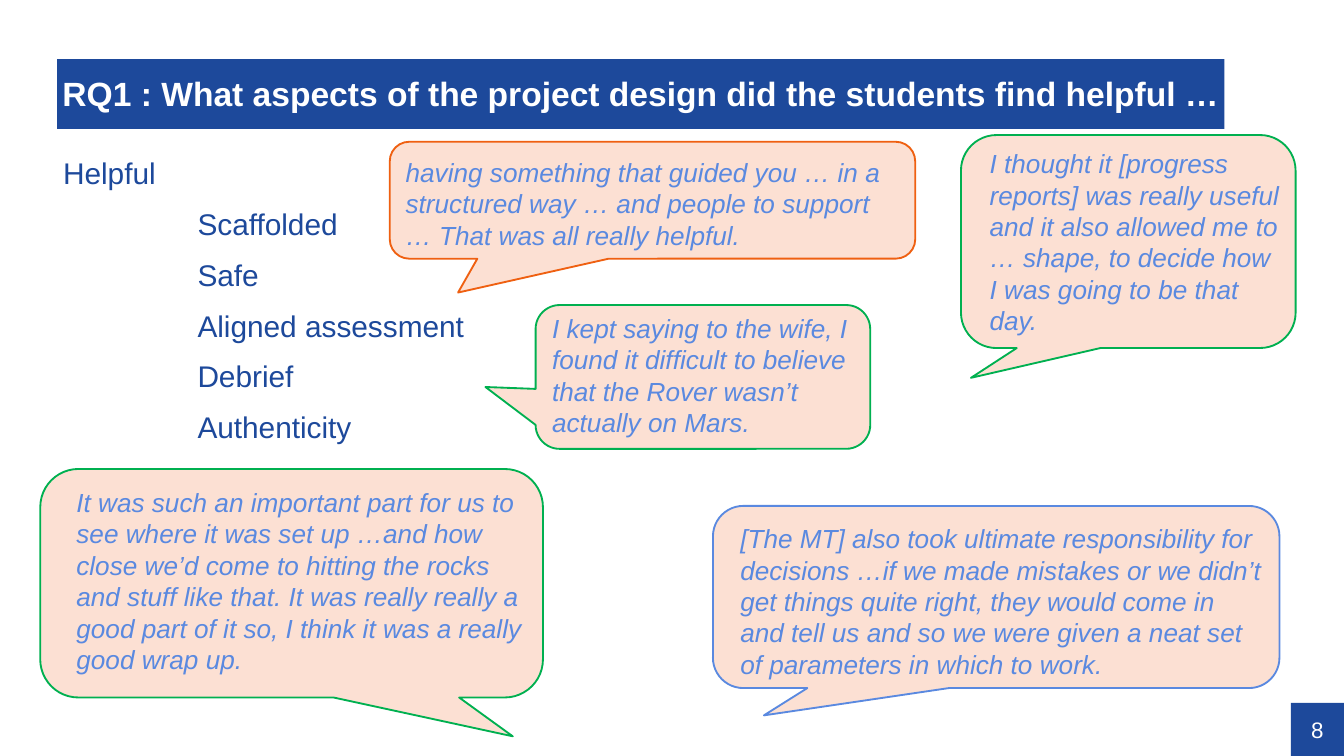
"""Build the slide on which aspects of the project design students found helpful."""
from typing import NamedTuple

from pptx import Presentation
from pptx.dml.color import RGBColor as Rgb
from pptx.enum.shapes import MSO_SHAPE as Shape
from pptx.enum.text import MSO_ANCHOR as Anchor, MSO_AUTO_SIZE as Fit, PP_ALIGN as Align
from pptx.util import Emu, Pt

PX = 4572
NAVY = Rgb(0x1D, 0x49, 0x9B)
BLUE = Rgb(0x5A, 0x89, 0xE0)
GREEN = Rgb(0x00, 0xB0, 0x50)
RUST = Rgb(0xEF, 0x60, 0x11)
PEACH = Rgb(0xFC, 0xE0, 0xD3)
WHITE = Rgb(0xFF, 0xFF, 0xFF)


class Box(NamedTuple):
    left: int
    top: int
    width: int
    height: int

    def emu(self) -> list[Emu]:
        return [Emu(n * PX) for n in self]


class Quote(NamedTuple):
    box: Box
    tip: tuple[float, float]
    line: Rgb
    area: Box
    text: str


QUOTES = [
    Quote(Box(60, 698, 748, 340), (0.44, 0.67), GREEN, Box(94, 714, 714, 350),
          "It was such an important part for us to see where it was set up …and how close "
          "we’d come to hitting the rocks and stuff like that. It was really really a good "
          "part of it so, I think it was a really good wrap up."),
    Quote(Box(1061, 753, 843, 271), (-0.41, 0.65), BLUE, Box(1082, 768, 818, 256),
          "[The MT] also took ultimate responsibility for decisions …if we made mistakes or "
          "we didn’t get things quite right, they would come in and tell us and so we were "
          "given a neat set of parameters in which to work."),
    Quote(Box(797, 454, 498, 214), (-0.65, 0.07), GREEN, Box(802, 455, 500, 208),
          "I kept saying to the wife, I found it difficult to believe that the Rover "
          "wasn’t actually on Mars."),
    Quote(Box(1430, 201, 498, 317), (-0.47, 0.64), GREEN, Box(1453, 210, 473, 350),
          "I thought it [progress reports] was really useful and it also allowed me to "
          "… shape, to decide how I was going to be that day."),
    Quote(Box(580, 211, 782, 174), (-0.37, 0.79), RUST, Box(584, 223, 774, 162),
          "having something that guided you … in a structured way … and people to support "
          "… That was all really helpful."),
]
ASPECTS = ["Scaffolded", "Safe", "Aligned assessment", "Debrief", "Authenticity"]


def style(para, size: int, color: Rgb, bold: bool = False, slant: bool = False) -> None:
    font = para.font
    font.name, font.size, font.bold, font.italic = "Arial", Pt(size), bold, slant
    font.color.rgb = color


def inset(frame, left: int = 0, top: int = 0) -> None:
    frame.margin_left, frame.margin_top = Emu(left * PX), Emu(top * PX)
    frame.margin_right = frame.margin_bottom = 0


def bubble(slide, quote: Quote) -> None:
    shape = slide.shapes.add_shape(Shape.ROUNDED_RECTANGULAR_CALLOUT, *quote.box.emu())
    shape.shadow.inherit = False
    shape.adjustments[0], shape.adjustments[1] = quote.tip
    shape.fill.solid()
    shape.fill.fore_color.rgb = PEACH
    shape.line.color.rgb = quote.line
    shape.line.width = Pt(1)


def banner(slide, box: Box, text: str, size: int, align: Align, bold: bool = False,
           pad: tuple[int, int] = (0, 0), gap: float = 1.0) -> None:
    shape = slide.shapes.add_shape(Shape.RECTANGLE, *box.emu())
    shape.shadow.inherit = False
    shape.fill.solid()
    shape.fill.fore_color.rgb = NAVY
    shape.line.fill.background()
    frame = shape.text_frame
    frame.word_wrap = True
    frame.vertical_anchor = Anchor.MIDDLE
    inset(frame, *pad)
    para = frame.paragraphs[0]
    para.text, para.alignment, para.line_spacing = text, align, gap
    style(para, size, WHITE, bold)


def outline(slide, box: Box, head: str, items: list[str]) -> None:
    frame = slide.shapes.add_textbox(*box.emu()).text_frame
    frame.word_wrap = True
    inset(frame)
    para = frame.paragraphs[0]
    for item in [head, *items]:
        if item != head:
            para = frame.add_paragraph()
            para.space_before = Pt(10)
            para._p.get_or_add_pPr().set("marL", str(200 * PX))
        para.text, para.line_spacing = item, 0.9
        style(para, 16, NAVY)


def speech(slide, quote: Quote) -> None:
    frame = slide.shapes.add_textbox(*quote.area.emu()).text_frame
    frame.word_wrap = True
    frame.auto_size = Fit.SHAPE_TO_FIT_TEXT
    para = frame.paragraphs[0]
    para.text = quote.text
    style(para, 14, BLUE, slant=True)


def main() -> None:
    deck = Presentation()
    deck.slide_width, deck.slide_height = Emu(2000 * PX), Emu(1125 * PX)
    slide = deck.slides.add_slide(deck.slide_layouts[6])
    for quote in QUOTES:
        bubble(slide, quote)
    banner(slide, Box(85, 88, 1737, 104),
           "RQ1 : What aspects of the project design did the students find helpful …",
           18, Align.LEFT, bold=True, pad=(8, 4), gap=0.9)
    banner(slide, Box(1921, 1046, 79, 79), "8", 12, Align.CENTER)
    outline(slide, Box(94, 236, 1826, 810), "Helpful", ASPECTS)
    for quote in QUOTES:
        speech(slide, quote)
    deck.save("out.pptx")


if __name__ == "__main__":
    main()
